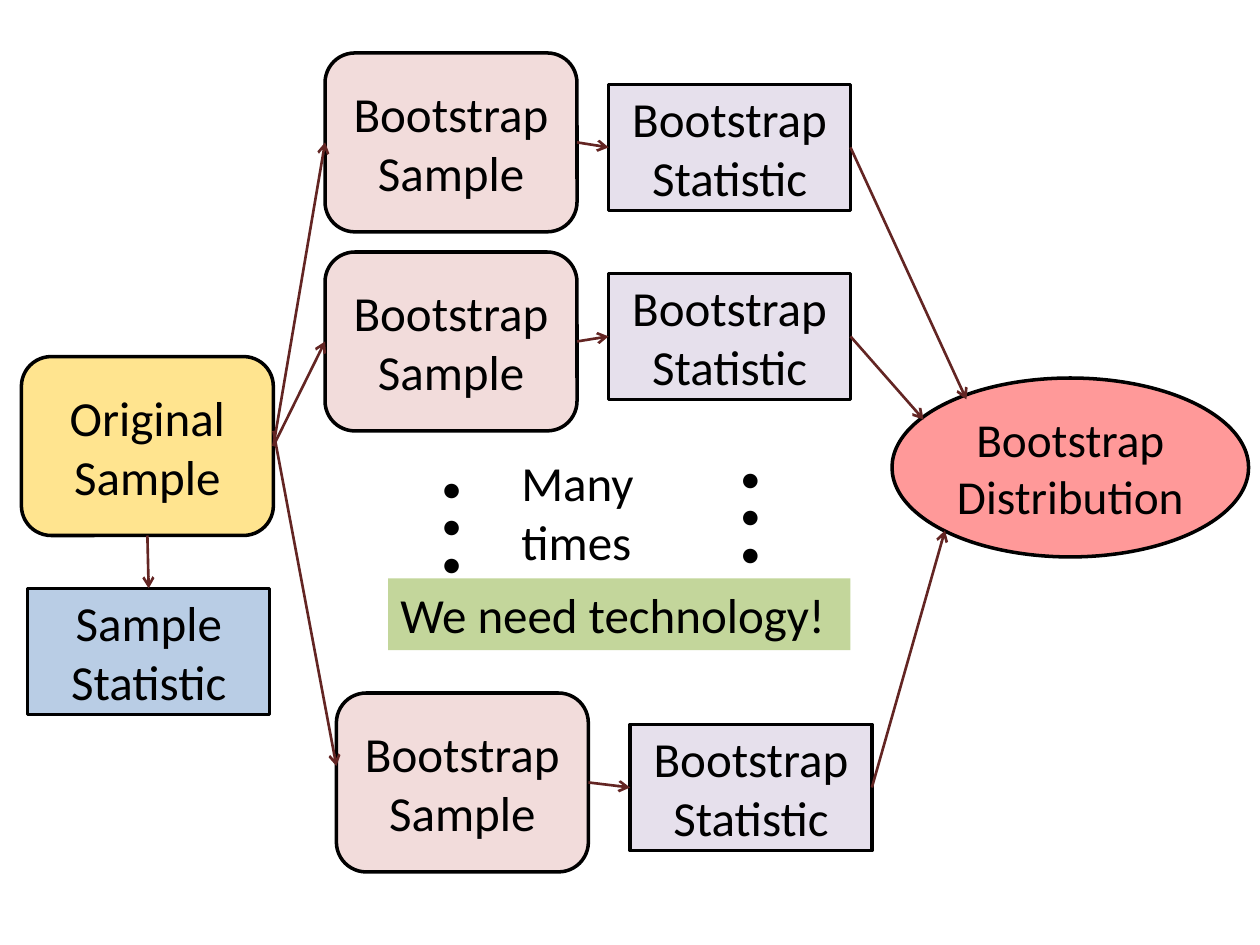
from dataclasses import dataclass

from lxml import etree
from pptx import Presentation
from pptx import util as u
from pptx.dml.color import RGBColor
from pptx.enum import shapes, text
from pptx.oxml import ns


@dataclass(frozen=True)
class Theme:
    font: str = "Calibri"
    ink: str = "000000"
    arrow: str = "632523"
    original: str = "FFE48F"
    sample: str = "F2DCDB"
    statistic: str = "E6E0EC"
    sample_statistic: str = "B9CDE5"
    distribution: str = "FF9999"
    banner: str = "C3D69B"
    body: float = 28
    distribution_size: float = 27
    dot_size: float = 18
    outline: float = 2
    arrow_width: float = 1.5


SAMPLE_SIZE = (2, 1.42)
STATISTIC_SIZE = (1.92, 1)
TOP, LEFT, BOTTOM, RIGHT = range(4)


def box_inches(box):
    return [u.Inches(value) for value in box]


class Diagram:
    def __init__(self, slide, theme):
        self.slide = slide
        self.theme = theme

    def add_text(self, frame, paragraphs, size, align):
        """Fill a frame; each newline inside a paragraph is a line break."""
        frame.word_wrap = True
        for index, content in enumerate(paragraphs):
            paragraph = frame.add_paragraph() if index else frame.paragraphs[0]
            paragraph.alignment = align
            for number, line in enumerate(content.split("\n")):
                if number:
                    paragraph.add_line_break()
                run = paragraph.add_run()
                run.text = line
                run.font.name = self.theme.font
                run.font.size = u.Pt(size)
                run.font.color.rgb = RGBColor.from_string(self.theme.ink)

    def filled(self, kind, box, fill):
        shape = self.slide.shapes.add_shape(kind, *box_inches(box))
        shape.shadow.inherit = False
        shape.fill.solid()
        shape.fill.fore_color.rgb = RGBColor.from_string(fill)
        return shape

    def node(self, kind, box, fill, label, size=None, inset=None):
        shape = self.filled(kind, box, fill)
        shape.line.color.rgb = RGBColor.from_string(self.theme.ink)
        shape.line.width = u.Pt(self.theme.outline)
        frame = shape.text_frame
        frame.vertical_anchor = text.MSO_ANCHOR.MIDDLE
        if inset is not None:
            frame.margin_left = frame.margin_right = u.Inches(inset)
            frame.margin_top = frame.margin_bottom = u.Inches(inset)
        self.add_text(frame, [label], size or self.theme.body, text.PP_ALIGN.CENTER)
        return shape

    def sample(self, left, top, fill, label):
        return self.node(shapes.MSO_SHAPE.ROUNDED_RECTANGLE,
                         (left, top, *SAMPLE_SIZE), fill, label)

    def statistic(self, left, top, fill, label):
        return self.node(shapes.MSO_SHAPE.RECTANGLE,
                         (left, top, *STATISTIC_SIZE), fill, label)

    def note(self, box, paragraphs, size, align):
        note = self.slide.shapes.add_textbox(*box_inches(box))
        self.add_text(note.text_frame, paragraphs, size, align)
        note.text_frame.auto_size = text.MSO_AUTO_SIZE.SHAPE_TO_FIT_TEXT

    def banner(self, box, label):
        banner = self.filled(shapes.MSO_SHAPE.RECTANGLE, box, self.theme.banner)
        banner.line.fill.background()
        banner.text_frame.vertical_anchor = text.MSO_ANCHOR.TOP
        self.add_text(banner.text_frame, [label], self.theme.body, text.PP_ALIGN.LEFT)

    def arrow(self, start, end):
        """Each end is a point (x, y) or a joined (shape, side)."""
        joined = [not isinstance(tip[0], (int, float)) for tip in (start, end)]
        points = [(0, 0) if is_joined else tip
                  for is_joined, tip in zip(joined, (start, end))]
        arrow = self.slide.shapes.add_connector(
            shapes.MSO_CONNECTOR.STRAIGHT, *box_inches(points[0] + points[1]))
        if joined[0]:
            arrow.begin_connect(*start)
        if joined[1]:
            arrow.end_connect(*end)
        arrow.line.color.rgb = RGBColor.from_string(self.theme.arrow)
        arrow.line.width = u.Pt(self.theme.arrow_width)
        outline = arrow._element.spPr.find(ns.qn("a:ln"))
        etree.SubElement(outline, ns.qn("a:tailEnd"), type="arrow")
        etree.SubElement(arrow._element.spPr, ns.qn("a:effectLst"))


def main():
    deck = Presentation()
    deck.slide_width, deck.slide_height = u.Inches(10), u.Inches(7.5)
    theme = Theme()
    diagram = Diagram(deck.slides.add_slide(deck.slide_layouts[6]), theme)

    original = diagram.sample(0.17, 2.83, theme.original, "Original Sample")
    sample_statistic = diagram.statistic(
        0.22, 4.67, theme.sample_statistic, "Sample Statistic")
    diagram.arrow((original, BOTTOM), (sample_statistic, TOP))

    diagram.node(shapes.MSO_SHAPE.OVAL, (7.08, 3, 2.83, 1.42), theme.distribution,
                 "Bootstrap Distribution", theme.distribution_size, inset=0)

    # sample left and top, statistic left and top, arrow into the sample,
    # arrow tip on the ellipse
    resamples = [
        (2.58, 0.42, 4.83, 0.67, None, (7.67, 3.17)),
        (2.58, 2, 4.83, 2.17, None, (7.33, 3.33)),
        (2.67, 5.5, 5, 5.75, ((2.17, 3.42), (2.67, 6.08)), (7.5, 4.21)),
    ]
    for left, top, statistic_left, statistic_top, free_ends, tip in resamples:
        sample = diagram.sample(left, top, theme.sample, "Bootstrap\nSample")
        statistic = diagram.statistic(
            statistic_left, statistic_top, theme.statistic, "Bootstrap Statistic")
        diagram.arrow(*(free_ends or ((original, RIGHT), (sample, LEFT))))
        diagram.arrow((sample, RIGHT), (statistic, LEFT))
        diagram.arrow((statistic, RIGHT), tip)

    diagram.note((4.04, 3.54, 1.33, 1.04), ["Many times"], theme.body,
                 text.PP_ALIGN.LEFT)
    for left, top in ((2.96, 3.67), (5.33, 3.59)):
        diagram.note((left, top, 1.25, 1.31), ["●"] * 3, theme.dot_size,
                     text.PP_ALIGN.CENTER)
    diagram.banner((3.08, 4.59, 3.67, 0.57), "We need technology!")

    deck.save("out.pptx")


if __name__ == "__main__":
    main()
